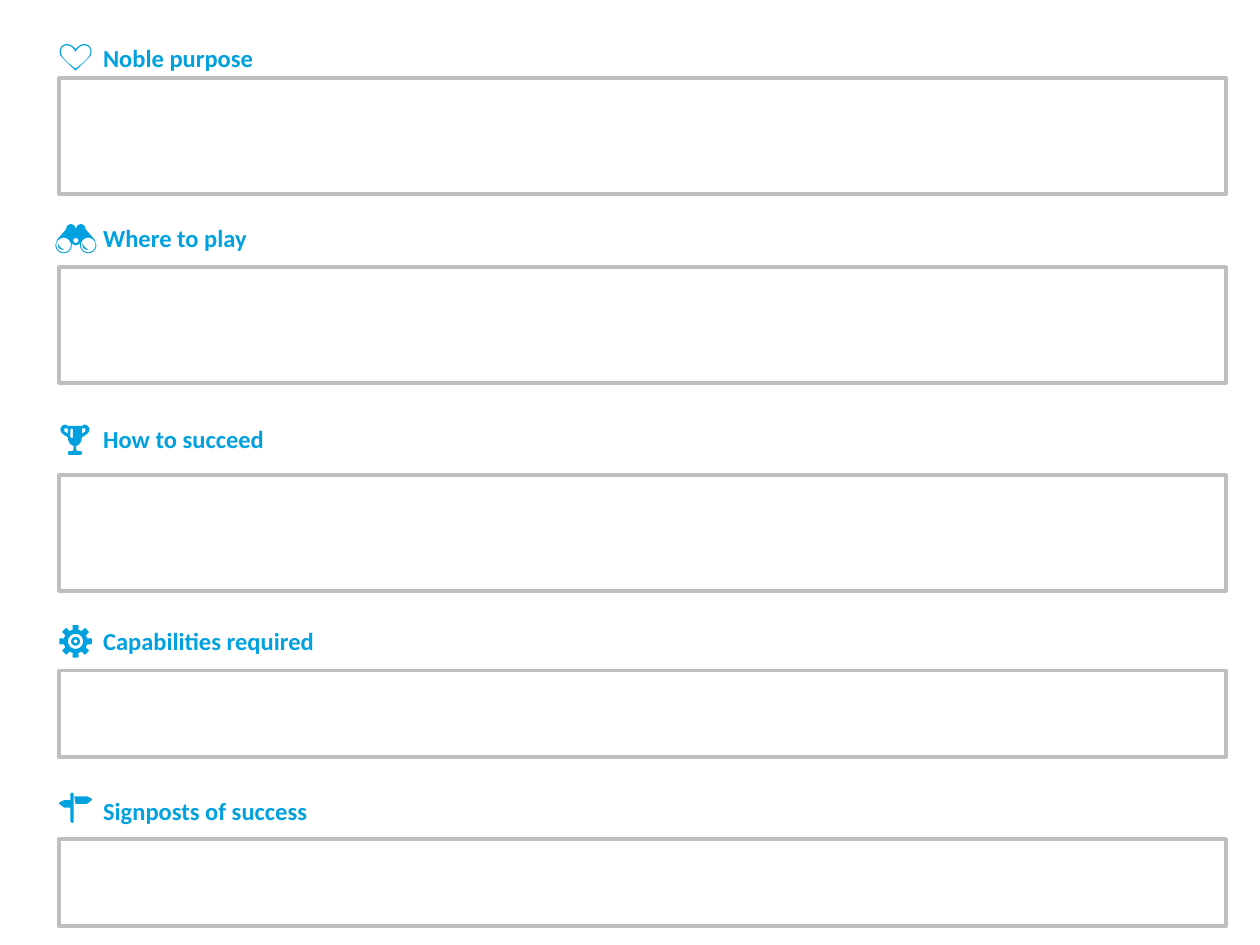
from math import cos, radians, sin

from pptx import Presentation
from pptx.dml.color import RGBColor
from pptx.enum.shapes import MSO_SHAPE as Shape
from pptx.enum.text import MSO_AUTO_SIZE as AutoSize
from pptx.util import Inches, Pt

BLUE = RGBColor(0x00, 0xA1, 0xDE)
GREY = RGBColor(0xBF, 0xBF, 0xBF)
COLUMNS, ROWS = 1000, 750
PANEL_LEFT, PANEL_WIDTH = 47, 926
HEADING_LEFT, HEADING_HEIGHT = 72, 34


def grid(count):
    return Inches(count / 100)


def arc(x, y, radius, start=0, end=360, steps=24):
    angles = [radians(start + (end - start) * i / steps) for i in range(steps + 1)]
    return [(x + radius * cos(a), y + radius * sin(a)) for a in angles]


def curve(*points, steps=8):
    traced = [points[0]]
    for i in range(0, len(points) - 1, 3):
        a, b, c, d = points[i:i + 4]
        for t in (step / steps for step in range(1, steps + 1)):
            s = 1 - t
            traced.append(tuple(
                s ** 3 * a[k] + 3 * s * s * t * b[k] + 3 * s * t * t * c[k] + t ** 3 * d[k]
                for k in (0, 1)))
    return traced


def mirrored(points, axis):
    return points + [(2 * axis - x, y) for x, y in reversed(points)]


def heart():
    outer = curve((14, 4), (14, 4), (11, 0), (7, 0), (3, 0), (0, 4), (2, 9),
                  (5, 13), (12, 19), (14, 21))
    inner = curve((14, 6), (13, 4.5), (11, 1), (7, 1), (3, 1), (1, 5), (3, 9),
                  (5, 13), (12, 18), (14, 19.5))
    return [[mirrored(outer, 14), mirrored(inner, 14)]]


def binoculars():
    left, right, eye = 6.5, 26, 16.25
    body = (arc(left, 16.5, 6.5, 180, -10) + arc(eye, 13, 3.7, 170, 10)
            + arc(right, 16.5, 6.5, 190, 0) + [(31, 12), (24, 4)]
            + arc(20.2, 3.7, 3.7, 0, -180) + arc(12.3, 3.7, 3.7, 0, -180)
            + [(8.5, 4), (1.5, 12)])
    holes = [arc(left, 16.5, 5.8), arc(right, 16.5, 5.8), arc(eye, 13, 2)]
    glints = [[curve((x, 15), (x, 15), (x - 1, 21), (x + 5, 20),
                     (x + 5, 20), (x + 1, 19), (x, 15))] for x in (2, 21.5)]
    return [[body, *holes], *glints]


def trophy():
    cup = curve((6, 1), (5, 1), (5, 0), (4, 0), (2, 0), (0, 2), (0, 4),
                (0, 7), (4, 9), (6, 10), (6, 14), (8, 16), (10.5, 17),
                (10.5, 20), (10.5, 21), (9, 21), (8, 21), (7, 21), (7, 21),
                (5.5, 21), (5.5, 24), (7, 24))
    handle = curve((3, 4), (3, 2.5), (6, 2.5), (6, 4), (6, 5), (6, 6), (6, 7),
                   (4, 6), (3, 6), (3, 4))
    shine = curve((8, 4), (8, 3), (10, 3), (10, 4), (10, 6), (10, 8), (10, 10),
                  (10, 11), (8, 11), (8, 10))
    other_handle = [(23 - x, y) for x, y in handle]
    return [[mirrored(cup, 11.5), handle, other_handle, shine]]


def gear():
    teeth = []
    for angle in range(0, 360, 45):
        for radius, offset in ((9.5, -14), (12.7, -11), (13, -7),
                               (13, 7), (12.7, 11), (9.5, 14)):
            turn = radians(angle + offset)
            teeth.append((13 + radius * cos(turn), 13 + radius * sin(turn)))
    return [[teeth, *(arc(13, 13, radius) for radius in (6, 3.5, 1.5))]]


def signpost():
    right_arm = [(12, 3), (22, 3), (26, 5), (26, 6), (22, 9), (13, 9)]
    post = [(10, 0), (11, 0), (11.5, 1), (11.5, 23), (11, 24), (10, 24), (9, 23),
            (9, 12), (4, 12), (0, 9), (0, 8), (4, 6), (9, 6), (9, 1)]
    return [[right_arm, post]]


def draw_icon(page, left, top, parts):
    shapes = page.shapes if len(parts) == 1 else page.shapes.add_group_shape().shapes
    for contours in parts:
        placed = [[(grid(left + x), grid(top + y)) for x, y in points]
                  for points in contours]
        builder = shapes.build_freeform(*placed[0][0])
        for i, points in enumerate(placed):
            if i:
                builder.move_to(*points[0])
            builder.add_line_segments(points[1:], close=True)
        shape = builder.convert_to_shape()
        shape.shadow.inherit = False
        shape.fill.solid()
        shape.fill.fore_color.rgb = BLUE
        shape.line.fill.background()


def draw_heading(page, top, width, title):
    box = page.shapes.add_textbox(grid(HEADING_LEFT), grid(top),
                                  grid(width), grid(HEADING_HEIGHT))
    frame = box.text_frame
    frame.word_wrap = True
    frame.auto_size = AutoSize.SHAPE_TO_FIT_TEXT
    frame.text = title
    font = frame.paragraphs[0].runs[0].font
    font.name, font.size, font.bold = "Calibri", Pt(14), True
    font.color.rgb = BLUE


def draw_panel(page, top, height):
    panel = page.shapes.add_shape(Shape.RECTANGLE, grid(PANEL_LEFT), grid(top),
                                  grid(PANEL_WIDTH), grid(height))
    panel.shadow.inherit = False
    panel.fill.background()
    panel.line.color.rgb = GREY
    panel.line.width = Pt(2)


SECTIONS = [
    ("Noble purpose", 29, 173, heart, 46, 35, 62, 92),
    ("Where to play", 172, 184, binoculars, 44, 178, 212, 92),
    ("How to succeed", 332, 184, trophy, 48, 337, 377, 92),
    ("Capabilities required", 492, 254, gear, 47, 496, 532, 69),
    ("Signposts of success", 627, 254, signpost, 47, 629, 666, 69),
]


def main():
    deck = Presentation()
    deck.slide_width, deck.slide_height = grid(COLUMNS), grid(ROWS)
    page = deck.slides.add_slide(deck.slide_layouts[6])
    for title, top, width, icon, icon_left, icon_top, panel_top, height in SECTIONS:
        draw_heading(page, top, width, title)
        draw_icon(page, icon_left, icon_top, icon())
        draw_panel(page, panel_top, height)
    deck.save("out.pptx")


if __name__ == "__main__":
    main()
